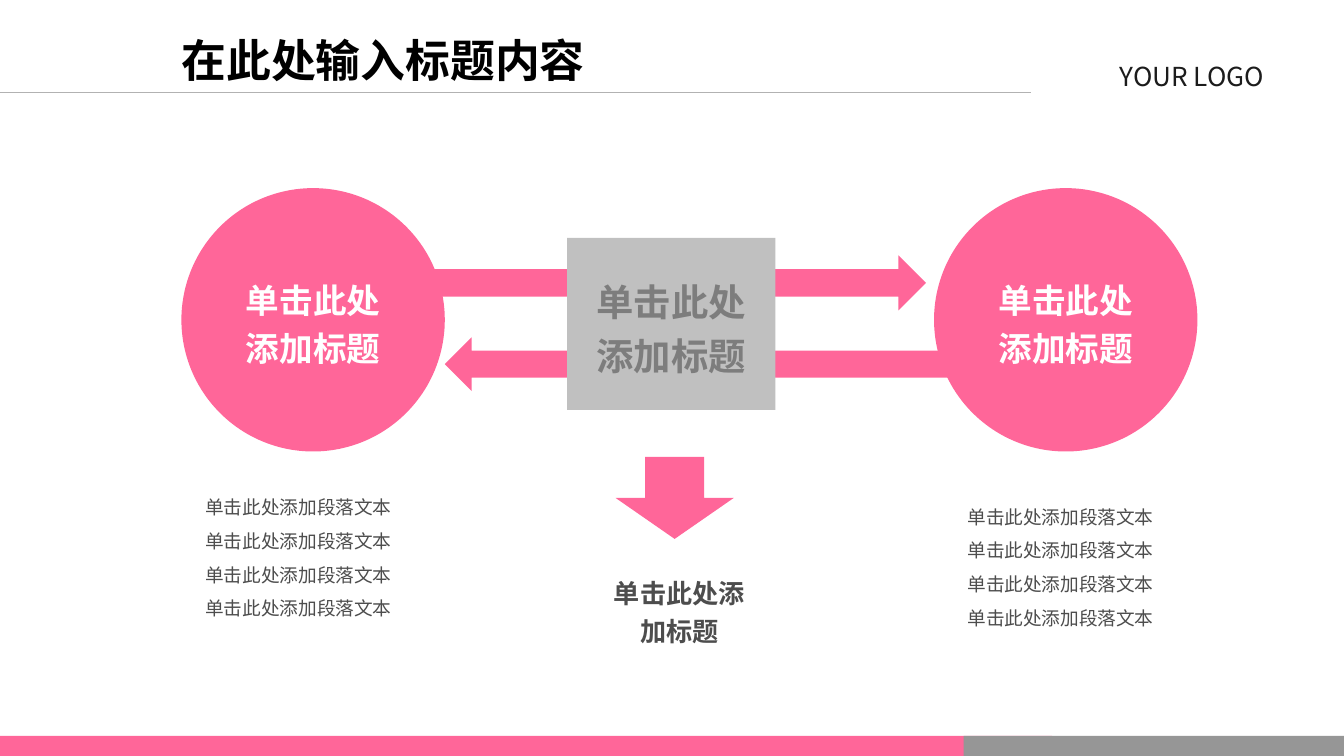
from lxml import etree
from pptx import Presentation
from pptx.dml.color import RGBColor
from pptx.enum.shapes import MSO_CONNECTOR, MSO_SHAPE
from pptx.enum.text import MSO_ANCHOR, MSO_AUTO_SIZE, PP_ALIGN
from pptx.oxml.ns import qn
from pptx.util import Inches, Pt

SANS, SERIF = "Noto Sans CJK SC", "Times New Roman"
PINK, SILVER, GRAY, DARK = "FF6699", "C0C0C0", "969696", "4D4D4D"
WIDTH = 10
HEIGHT = WIDTH * 9 / 16
BAR_HEIGHT = 0.15
BAR_TOP = HEIGHT - BAR_HEIGHT

TITLE = "在此处输入标题内容"
LABEL = "单击此处添加标题"
BODY = "单击此处添加段落文本" * 4

# Preset, box (left, top, width, height), fill
BARS = [
    (MSO_SHAPE.RECTANGLE, (0, BAR_TOP, 7.83, BAR_HEIGHT), PINK),
    (MSO_SHAPE.RECTANGLE, (7.17, BAR_TOP, 2.83, BAR_HEIGHT), GRAY),
]
ARROWS = [
    (MSO_SHAPE.RIGHT_ARROW, (3.17, 1.9, 3.72, 0.41), PINK),
    (MSO_SHAPE.LEFT_ARROW, (3.31, 2.51, 3.85, 0.4), PINK),
    (MSO_SHAPE.DOWN_ARROW, (4.58, 3.4, 0.88, 0.61), PINK),
]
# Preset, box, fill, text size, text colour
NODES = [
    (MSO_SHAPE.OVAL, (1.35, 1.4, 1.96, 1.96), PINK, 18, "FFFFFF"),
    (MSO_SHAPE.OVAL, (6.95, 1.4, 1.96, 1.96), PINK, 18, "FFFFFF"),
    (MSO_SHAPE.RECTANGLE, (4.22, 1.77, 1.55, 1.28), SILVER, 20, "7D7D7D"),
]
# Text, box, size, colour, bold, line pitch in points
CAPTIONS = [
    ("YOUR LOGO", (7.83, 0.4, 2.08, 0.33), 14, "1C1C1C", False, None),
    (BODY, (1.41, 3.56, 1.62, 1.1), 10, DARK, False, 18),
    (BODY, (7.08, 3.63, 1.62, 1.1), 10, DARK, False, 18),
    (LABEL, (4.44, 4.2, 1.23, 0.66), 14, DARK, True, 20.4),
]


def rgb(color):
    return RGBColor.from_string(color)


def inches(box):
    return [Inches(value) for value in box]


def write(shape, text, size, color, bold, pitch=None, font=SANS, anchor=MSO_ANCHOR.MIDDLE):
    frame = shape.text_frame
    frame.text = text
    frame.word_wrap = True
    frame.auto_size = MSO_AUTO_SIZE.NONE
    frame.vertical_anchor = anchor
    paragraph = frame.paragraphs[0]
    paragraph.alignment = PP_ALIGN.CENTER
    if pitch:
        paragraph.line_spacing = Pt(pitch)
    run = paragraph.runs[0]
    run.font.size, run.font.bold, run.font.name = Pt(size), bold, font
    run.font.color.rgb = rgb(color)
    east_asian = etree.Element(qn("a:ea"), typeface=SANS)
    run.font._element.find(qn("a:latin")).addnext(east_asian)


def add_block(slide, preset, box, fill):
    shape = slide.shapes.add_shape(preset, *inches(box))
    shape.shadow.inherit = False
    shape.fill.solid()
    shape.fill.fore_color.rgb = rgb(fill)
    shape.line.fill.background()
    return shape


def main():
    presentation = Presentation()
    presentation.slide_width, presentation.slide_height = inches((WIDTH, HEIGHT))
    slide = presentation.slides.add_slide(presentation.slide_layouts[5])

    title = slide.shapes.title
    title.left, title.top, title.width, title.height = inches((0.92, 0.19, 3.86, 0.5))
    write(title, TITLE, 24, "000000", True, font=SERIF)

    rule = slide.shapes.add_connector(
        MSO_CONNECTOR.STRAIGHT, *inches((0, 0.69, 7.67, 0.69)))
    rule.line.color.rgb = rgb("B2B2B2")
    rule.line.width = Pt(0.75)
    etree.SubElement(rule._element.spPr, qn("a:effectLst"))

    for preset, box, fill in BARS + ARROWS:
        add_block(slide, preset, box, fill)
    for preset, box, fill, size, color in NODES:
        node = add_block(slide, preset, box, fill)
        write(node, LABEL, size, color, True, pitch=size * 1.45)
    for text, box, size, color, bold, pitch in CAPTIONS:
        caption = slide.shapes.add_textbox(*inches(box))
        anchor = MSO_ANCHOR.TOP if pitch else MSO_ANCHOR.MIDDLE
        write(caption, text, size, color, bold, pitch, anchor=anchor)

    presentation.save("out.pptx")


if __name__ == "__main__":
    main()
